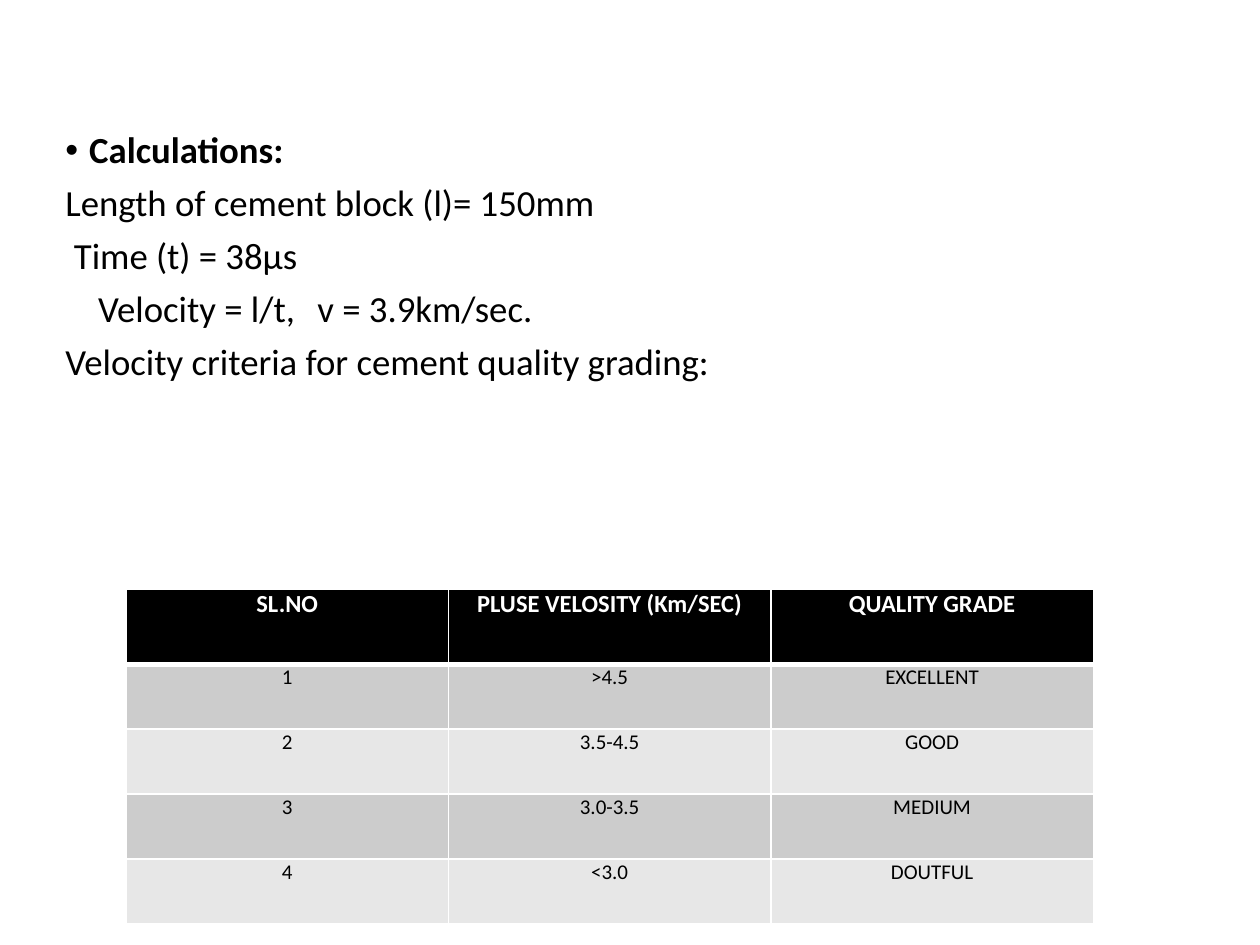
from pptx import Presentation
from pptx.dml.color import RGBColor
from pptx.enum import text
from pptx.oxml import parse_xml
from pptx.oxml.ns import nsdecls
from pptx.util import Cm, Pt

BLACK = RGBColor(0x00, 0x00, 0x00)
WHITE = RGBColor(0xFF, 0xFF, 0xFF)
DARK_BAND = RGBColor(0xCC, 0xCC, 0xCC)
LIGHT_BAND = RGBColor(0xE7, 0xE7, 0xE7)
FONT = "Calibri"

HEADING = "Calculations:"
LINES = [
    ("Length of cement block (l)= 150mm", 0),
    ("Time (t) = 38µs", 0.17),
    ("Velocity = l/t,\tv = 3.9km/sec.", 0.66),
    ("Velocity criteria for cement quality grading:", 0),
]
GRADES = [
    ("SL.NO", "PLUSE VELOSITY (Km/SEC)", "QUALITY GRADE"),
    ("1", ">4.5", "EXCELLENT"),
    ("2", "3.5-4.5", "GOOD"),
    ("3", "3.0-3.5", "MEDIUM"),
    ("4", "<3.0", "DOUTFUL"),
]
BULLET_INDENT = 0.48
RESULT_TAB = 5.8
COL_WIDTH = 6.5
HEADER_HEIGHT, ROW_HEIGHT = 1.52, 1.31


def style(p, size, color, bold):
    for r in p.runs:
        r.font.name = FONT
        r.font.size = Pt(size)
        r.font.bold = bold
        r.font.color.rgb = color


def indent(p, margin, first):
    pPr = p._p.get_or_add_pPr()
    pPr.set("marL", str(Cm(margin)))
    pPr.set("indent", str(Cm(first)))
    return pPr


def add_calculations(s):
    tf = s.shapes.add_textbox(Cm(1.07), Cm(2.54), Cm(22.86), Cm(11.43)).text_frame
    tf.word_wrap = True
    for i, (line, first) in enumerate([(HEADING, -BULLET_INDENT)] + LINES):
        p = tf.paragraphs[0] if i == 0 else tf.add_paragraph()
        p.text = line
        p.line_spacing = 0.9
        p.space_before = Pt(7.5)
        style(p, 21, BLACK, i == 0)
        pPr = indent(p, BULLET_INDENT if i == 0 else 0, first)
        if i == 0:
            pPr.append(parse_xml(f'<a:buFont {nsdecls("a")} typeface="Arial"/>'))
            pPr.append(parse_xml(f'<a:buChar {nsdecls("a")} char="•"/>'))
        elif "\t" in line:
            pPr.append(parse_xml(
                f'<a:tabLst {nsdecls("a")}><a:tab pos="{Cm(RESULT_TAB)}" algn="l"/></a:tabLst>'))


def set_borders(cell, widths):
    tcPr = cell._tc.get_or_add_tcPr()
    for i, (side, width) in enumerate(widths.items()):
        tcPr.insert(i, parse_xml(
            f'<a:{side} {nsdecls("a")} w="{Pt(width)}"><a:solidFill>'
            f'<a:srgbClr val="{WHITE}"/></a:solidFill></a:{side}>'))


def add_grades(s):
    height = HEADER_HEIGHT + ROW_HEIGHT * (len(GRADES) - 1)
    table = s.shapes.add_table(len(GRADES), len(GRADES[0]), Cm(2.54), Cm(11.87),
                               Cm(COL_WIDTH * len(GRADES[0])), Cm(height)).table
    for col in table.columns:
        col.width = Cm(COL_WIDTH)
    for i, values in enumerate(GRADES):
        header = i == 0
        table.rows[i].height = Cm(HEADER_HEIGHT if header else ROW_HEIGHT)
        fill = BLACK if header else (LIGHT_BAND, DARK_BAND)[i % 2]
        for j, value in enumerate(values):
            cell = table.cell(i, j)
            cell.margin_left = cell.margin_right = Cm(0.18)
            cell.margin_top = cell.margin_bottom = 0
            cell.fill.solid()
            cell.fill.fore_color.rgb = fill
            cell.text_frame.text = value
            p = cell.text_frame.paragraphs[0]
            p.alignment = text.PP_ALIGN.CENTER
            style(p, 14 if header else 12, WHITE if header else BLACK, header)
            set_borders(cell, {"lnL": 1, "lnR": 1, "lnT": 3 if i == 1 else 1,
                               "lnB": 3 if header else 1})


def main():
    prs = Presentation()
    prs.slide_width, prs.slide_height = Cm(25.4), Cm(19.05)
    s = prs.slides.add_slide(prs.slide_layouts[6])
    add_calculations(s)
    add_grades(s)
    prs.save("out.pptx")


if __name__ == "__main__":
    main()
